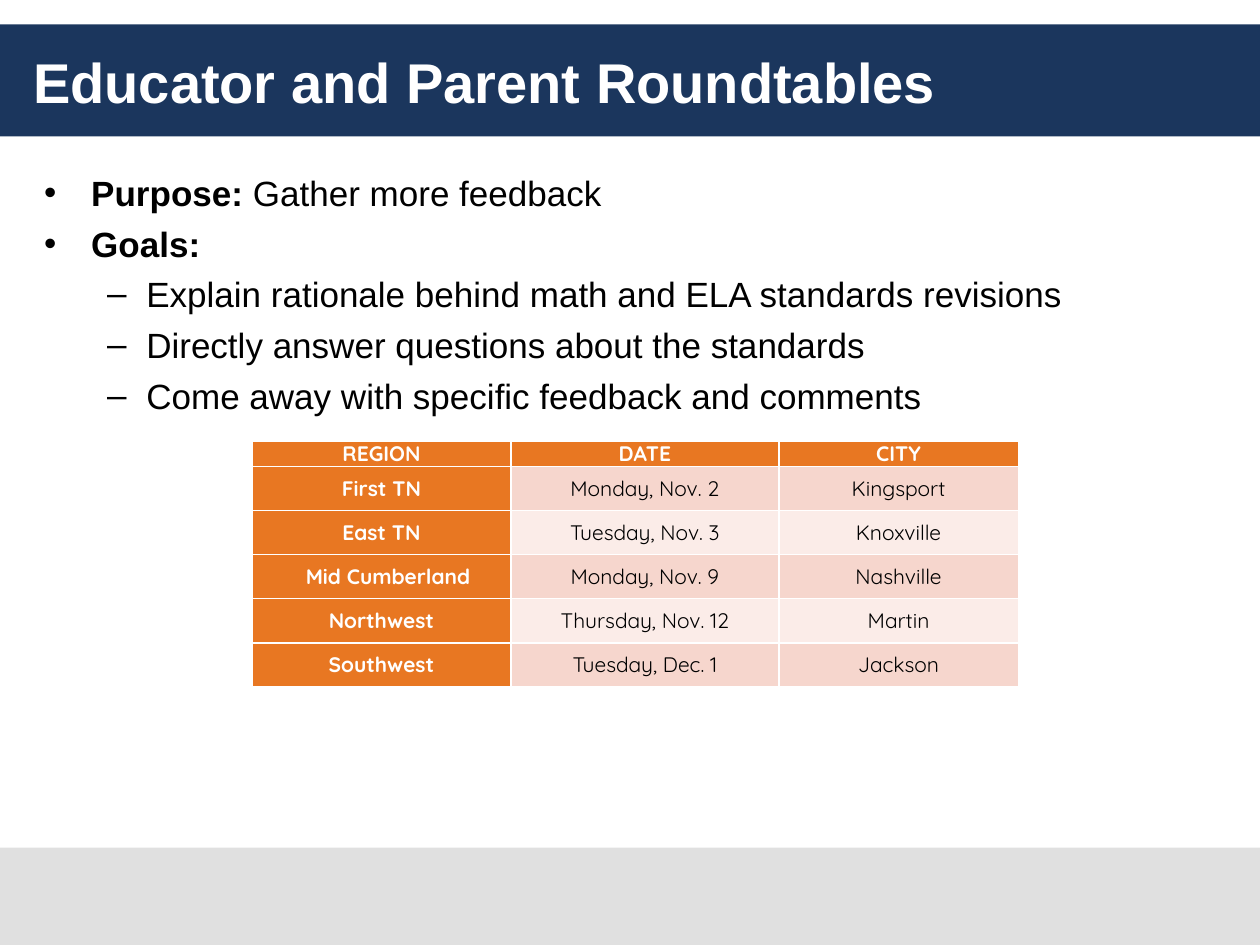
"""Build the Educator and Parent Roundtables slide."""
from lxml import etree
from pptx import Presentation
from pptx import util as u
from pptx.dml.color import RGBColor
from pptx.enum import shapes, text
from pptx.oxml.ns import qn


def paint(target, color):
    target.solid()
    target.fore_color.rgb = RGBColor.from_string(color)


def style(paragraph, font_name, size, color, bold):
    paragraph.font.name = font_name
    paragraph.font.size = u.Pt(size)
    paragraph.font.bold = bold
    paint(paragraph.font.fill, color)


NAVY, GRAY, ORANGE = "1B365D", "E0E0E0", "E87722"
WHITE, BLACK = "FFFFFF", "000000"
BANDS = ["FBECE8", "F6D6CD"]

presentation = Presentation()
presentation.slide_width = u.Cm(25.4)
presentation.slide_height = u.Cm(19.05)
slide = presentation.slides.add_slide(presentation.slide_layouts[6])

for top, height, color in [(0.49, 2.26, NAVY), (17.09, 1.96, GRAY)]:
    band = slide.shapes.add_shape(
        shapes.MSO_SHAPE.RECTANGLE, 0, u.Cm(top), presentation.slide_width, u.Cm(height))
    band.shadow.inherit = False
    paint(band.fill, color)
    band.line.fill.background()

title = slide.shapes.add_textbox(u.Cm(0.42), u.Cm(0.49), u.Cm(24.56), u.Cm(2.28))
title.text_frame.word_wrap = True
title.text_frame.vertical_anchor = text.MSO_ANCHOR.MIDDLE
title.text_frame.text = "Educator and Parent Roundtables"
style(title.text_frame.paragraphs[0], "Arial", 32, WHITE, True)

bullets = [
    (0, "Purpose: ", "Gather more feedback"),
    (0, "Goals:", ""),
    (1, "", "Explain rationale behind math and ELA standards revisions"),
    (1, "", "Directly answer questions about the standards"),
    (1, "", "Come away with specific feedback and comments"),
]
levels = [("•", 0.95, 0.95), ("–", 2.06, 0.79)]
body = slide.shapes.add_textbox(u.Cm(0.64), u.Cm(3.33), u.Cm(24.34), u.Cm(13.76))
body.text_frame.word_wrap = True
for index, (level, lead, detail) in enumerate(bullets):
    paragraph = body.text_frame.paragraphs[0] if index == 0 else body.text_frame.add_paragraph()
    mark, margin, hanging = levels[level]
    paragraph.level = level
    paragraph.space_before = u.Pt(5 if index else 0)
    properties = paragraph._p.get_or_add_pPr()
    properties.set("marL", str(u.Cm(margin)))
    properties.set("indent", str(-u.Cm(hanging)))
    etree.SubElement(properties, qn("a:buFont"), typeface="Arial")
    etree.SubElement(properties, qn("a:buChar"), char=mark)
    style(paragraph, "Arial", 20, BLACK, bool(lead))
    for words, bold in [(lead, True), (detail, False)]:
        if words:
            run = paragraph.add_run()
            run.text = words
            run.font.bold = bold

schedule = [
    ("REGION", "DATE", "CITY"),
    ("First TN", "Monday, Nov. 2", "Kingsport"),
    ("East TN", "Tuesday, Nov. 3", "Knoxville"),
    ("Mid Cumberland", "Monday, Nov. 9", "Nashville"),
    ("Northwest", "Thursday, Nov. 12", "Martin"),
    ("Southwest", "Tuesday, Dec. 1", "Jackson"),
]
table = slide.shapes.add_table(
    len(schedule), 3, u.Cm(5.08), u.Cm(8.89), u.Cm(15.45), u.Cm(4.91)).table
table.first_col = True
for column, width in zip(table.columns, [5.22, 5.4, 4.83]):
    column.width = u.Cm(width)
for row_index, entries in enumerate(schedule):
    table.rows[row_index].height = u.Cm(0.89 if row_index else 0.46)
    for column_index, entry in enumerate(entries):
        heading = row_index == 0 or column_index == 0
        cell = table.cell(row_index, column_index)
        cell.text = entry
        cell.vertical_anchor = text.MSO_ANCHOR.MIDDLE
        cell.margin_left = u.Cm(0.45 if entry == "Mid Cumberland" else 0.18)
        cell.margin_right = u.Cm(0.18)
        cell.margin_top = cell.margin_bottom = 0
        paint(cell.fill, ORANGE if heading else BANDS[row_index % 2])
        paragraph = cell.text_frame.paragraphs[0]
        paragraph.alignment = text.PP_ALIGN.CENTER
        style(paragraph, "Quicksand", 12, WHITE if heading else BLACK, heading)

presentation.save("out.pptx")
